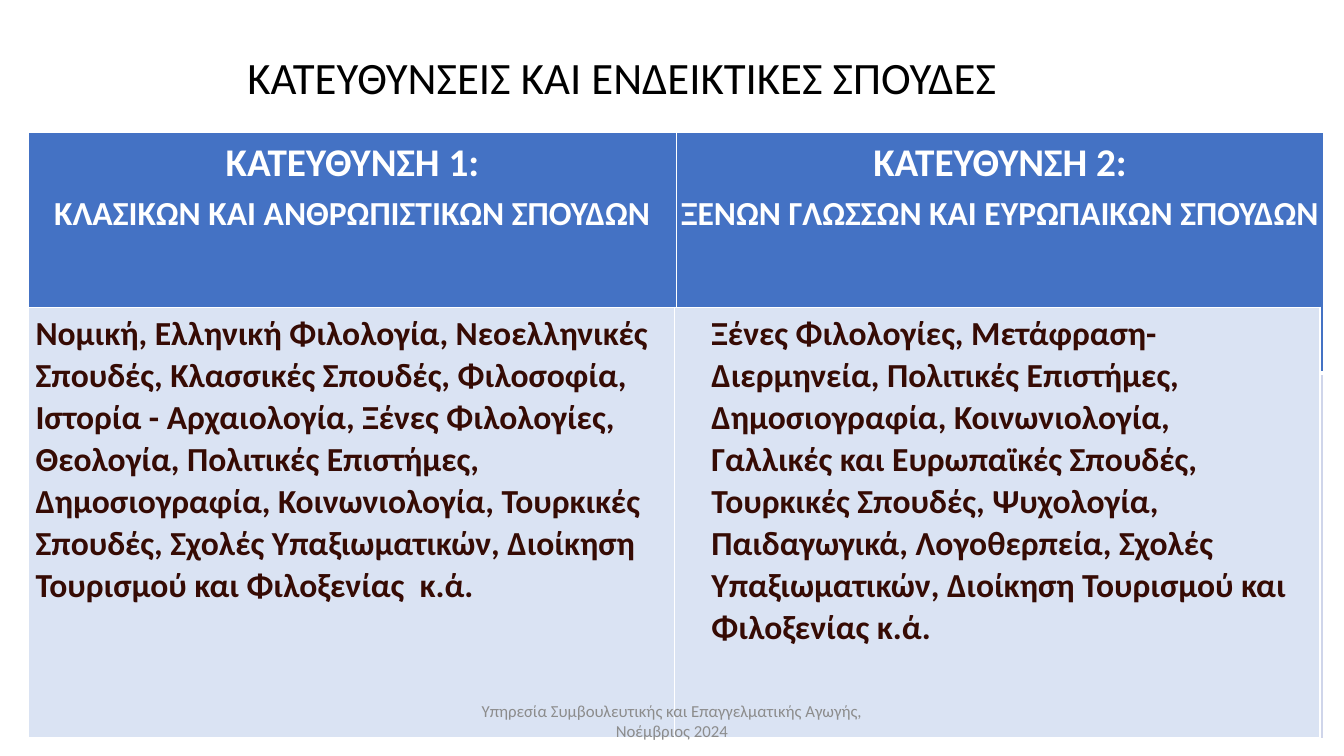
from dataclasses import dataclass

from lxml.etree import SubElement
from pptx import Presentation
from pptx.dml.color import RGBColor as RGB
from pptx.enum.text import MSO_ANCHOR as ANCHOR, PP_ALIGN as ALIGN
from pptx.oxml.ns import qn
from pptx.util import Pt


@dataclass(frozen=True)
class Theme:
    font: str = "Calibri"
    title_size: int = 32
    head_size: int = 28
    body_size: int = 24
    footer_size: int = 12
    black: str = "000000"
    white: str = "FFFFFF"
    header: str = "4472C4"
    band: str = "CFD5EA"
    body: str = "DAE3F3"
    body_text: str = "360B04"
    footer: str = "8C8C8C"


THEME = Theme()

HEADINGS = [
    ("ΚΑΤΕΥΘΥΝΣΗ 1:", "ΚΛΑΣΙΚΩΝ ΚΑΙ ΑΝΘΡΩΠΙΣΤΙΚΩΝ ΣΠΟΥΔΩΝ"),
    ("ΚΑΤΕΥΘΥΝΣΗ 2:", "ΞΕΝΩΝ ΓΛΩΣΣΩΝ ΚΑΙ ΕΥΡΩΠΑΙΚΩΝ ΣΠΟΥΔΩΝ"),
]
CLASSICS = [
    "Νομική, Ελληνική Φιλολογία, Νεοελληνικές Σπουδές, Κλασσικές Σπουδές, "
    "Φιλοσοφία, Ιστορία - Αρχαιολογία, Ξένες Φιλολογίες, Θεολογία, "
    "Πολιτικές Επιστήμες, Δημοσιογραφία, Κοινωνιολογία, Τουρκικές Σπουδές, "
    "Σχολές Υπαξιωματικών, Διοίκηση Τουρισμού και Φιλοξενίας  κ.ά.",
]
LANGUAGES = [
    "Ξένες Φιλολογίες, Μετάφραση-",
    "Διερμηνεία, Πολιτικές Επιστήμες,",
    "Δημοσιογραφία, Κοινωνιολογία,",
    "Γαλλικές και Ευρωπαϊκές Σπουδές,",
    "Τουρκικές Σπουδές, Ψυχολογία,",
    "Παιδαγωγικά, Λογοθερπεία, Σχολές",
    "Υπαξιωματικών, Διοίκηση Τουρισμού και",
    "Φιλοξενίας κ.ά.",
]


def write(tf, lines, sizes, color, bold=False, align=ALIGN.LEFT, spacing=1.0):
    """Put one paragraph per line, each with its own size."""
    for i, (line, size) in enumerate(zip(lines, sizes)):
        p = tf.add_paragraph() if i else tf.paragraphs[0]
        p.text, p.alignment, p.line_spacing = line, align, spacing
        p.font.name, p.font.size, p.font.bold = THEME.font, Pt(size), bold
        p.font.color.rgb = RGB.from_string(color)


def add_label(slide, box, text, size, color, spacing=1.0):
    tf = slide.shapes.add_textbox(*map(Pt, box)).text_frame
    tf.word_wrap = True
    tf.vertical_anchor = ANCHOR.MIDDLE
    write(tf, [text], [size], color, align=ALIGN.CENTER, spacing=spacing)


def style_cell(cell, fill, margins, bottom=1):
    """Set borders, fill and (left, top, right, bottom) margins."""
    tcPr = cell._tc.get_or_add_tcPr()
    for side, width in zip("LRTB", (1, 1, 1, bottom)):
        ln = SubElement(tcPr, qn(f"a:ln{side}"), w=str(Pt(width)))
        solid = SubElement(ln, qn("a:solidFill"))
        SubElement(solid, qn("a:srgbClr"), val=THEME.white)
    cell.fill.solid()
    cell.fill.fore_color.rgb = RGB.from_string(fill)
    (cell.margin_left, cell.margin_top,
     cell.margin_right, cell.margin_bottom) = map(Pt, margins)


def add_grid(slide, box, row_heights):
    """Add a two-column table without banding."""
    table = slide.shapes.add_table(len(row_heights), 2, *map(Pt, box)).table
    table.first_row = table.horz_banding = False
    for col in table.columns:
        col.width = Pt(box[2] / 2)
    for row, height in zip(table.rows, row_heights):
        row.height = Pt(height)
    return table


def add_heading_table(slide, box):
    head_height = 172
    table = add_grid(slide, box, [head_height, box[3] - head_height])
    for col, lines in enumerate(HEADINGS):
        cell = table.cell(0, col)
        style_cell(cell, THEME.header, (3, 0, 3, 0), bottom=3)
        write(cell.text_frame, lines, (THEME.head_size, THEME.body_size),
              THEME.white, True, ALIGN.CENTER, 1.15)
        style_cell(table.cell(1, col), THEME.band, (5, 3.6, 5, 3.6))
    table.cell(1, 0).merge(table.cell(1, 1))


def add_studies_table(slide, box):
    table = add_grid(slide, box, [box[3]])
    for col, (lines, left) in enumerate([(CLASSICS, 5), (LANGUAGES, 26.6)]):
        cell = table.cell(0, col)
        style_cell(cell, THEME.body, (left, 3.6, 5, 3.6), bottom=3)
        write(cell.text_frame, lines, [THEME.body_size] * len(lines),
              THEME.body_text, True, spacing=Pt(30))


def main():
    prs = Presentation()
    prs.slide_width, prs.slide_height = Pt(960), Pt(540)
    slide = prs.slides.add_slide(prs.slide_layouts[6])
    add_label(slide, (31, 20, 827, 73.5), "ΚΑΤΕΥΘΥΝΣΕΙΣ ΚΑΙ ΕΝΔΕΙΚΤΙΚΕΣ ΣΠΟΥΔΕΣ",
              THEME.title_size, THEME.black, 0.9)
    add_heading_table(slide, (20.4, 94.5, 925.2, 433.4))
    add_studies_table(slide, (20.4, 219.4, 922.4, 308.6))
    add_label(slide, (318, 500.5, 324, 28.75),
              "Υπηρεσία Συμβουλευτικής και Επαγγελματικής Αγωγής, Νοέμβριος 2024",
              THEME.footer_size, THEME.footer)
    prs.save("out.pptx")


if __name__ == "__main__":
    main()
